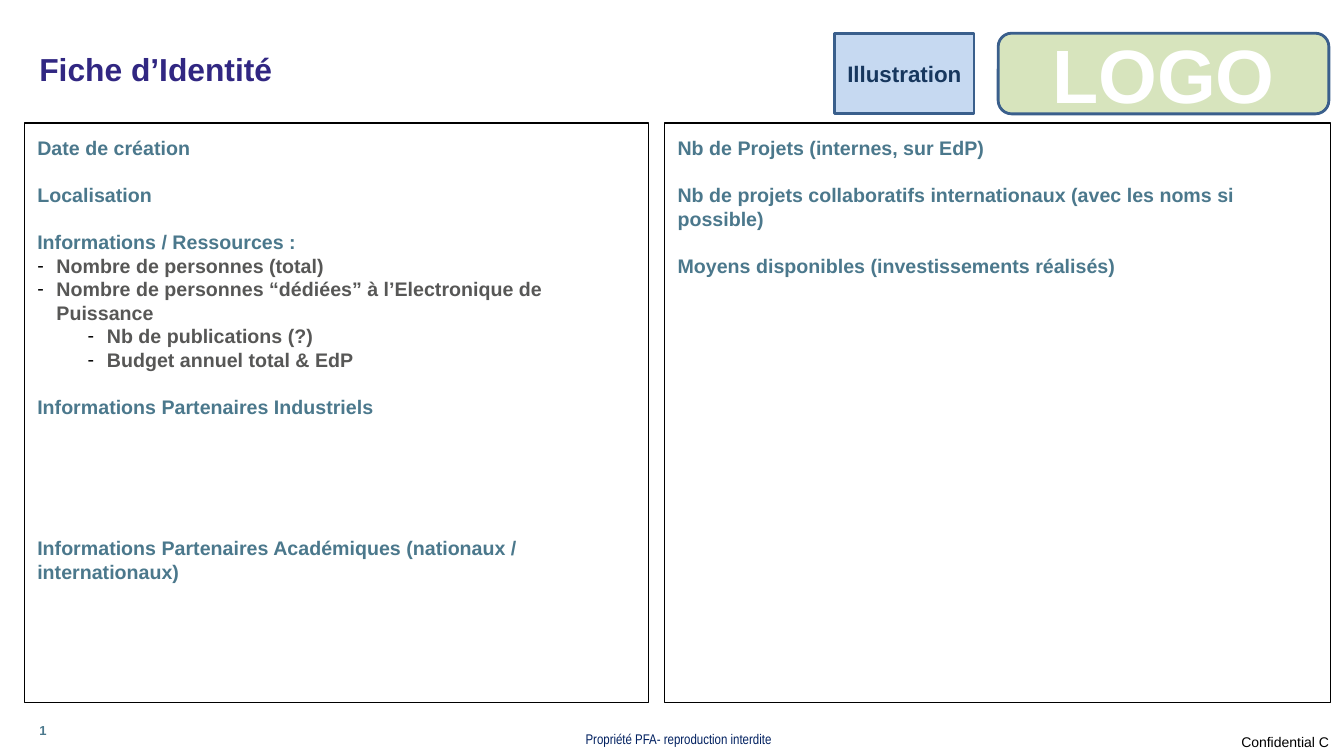
"""Build the identity sheet slide of a research partner."""
from dataclasses import dataclass

from lxml import etree
from pptx import Presentation
from pptx.dml.color import RGBColor
from pptx.enum.shapes import MSO_SHAPE
from pptx.enum.text import MSO_ANCHOR, MSO_AUTO_SIZE, PP_ALIGN
from pptx.oxml.ns import qn
from pptx.util import Inches, Pt

TOP, MIDDLE, BOTTOM = MSO_ANCHOR.TOP, MSO_ANCHOR.MIDDLE, MSO_ANCHOR.BOTTOM
LEFT, CENTER, RIGHT = PP_ALIGN.LEFT, PP_ALIGN.CENTER, PP_ALIGN.RIGHT
RECTANGLE, ROUNDED = MSO_SHAPE.RECTANGLE, MSO_SHAPE.ROUNDED_RECTANGLE
NO_AUTOFIT = MSO_AUTO_SIZE.NONE
TWO_CONTENT_LAYOUT = 3
LINE_PITCH = 16.8
HANGING = 0.19
COLORS = {
    "title": "312782", "heading": "4B788C", "detail": "575756",
    "black": "000000", "white": "FFFFFF", "footer": "002060",
    "badge_line": "3A5F8C", "logo_fill": "D7E4BD",
    "picture_fill": "C6D9F1", "picture_text": "17375E",
}


@dataclass(frozen=True)
class Item:
    """One line of a panel; a margin makes it a dashed detail."""
    text: str
    blank_lines: int = 1
    margin: float | None = None


@dataclass(frozen=True)
class Panel:
    """A framed list."""
    left: float
    width: float
    items: tuple[Item, ...]


@dataclass(frozen=True)
class Badge:
    """A filled label at the top of the page."""
    text: str
    preset: MSO_SHAPE
    left: float
    width: float
    fill: str
    color: str
    size: float


@dataclass(frozen=True)
class Note:
    """A small text at the foot of the page."""
    text: str
    area: tuple[float, float, float, float]
    insets: tuple[float, float, float, float]
    size: float
    color: str
    bold: bool = False
    font: str = "Arial"
    align: PP_ALIGN = LEFT
    anchor: MSO_ANCHOR = TOP


PANELS = (
    Panel(0.24, 6.19, (
        Item("Date de création"),
        Item("Localisation"),
        Item("Informations / Ressources :"),
        Item("Nombre de personnes (total)", 0, 0.19),
        Item("Nombre de personnes “dédiées” à l’Electronique de Puissance", 0, 0.19),
        Item("Nb de publications (?)", 0, 0.69),
        Item("Budget annuel total & EdP", 0, 0.69),
        Item("Informations Partenaires Industriels"),
        Item("Informations Partenaires Académiques (nationaux / internationaux)", 5),
    )),
    Panel(6.59, 6.61, (
        Item("Nb de Projets (internes, sur EdP)"),
        Item("Nb de projets collaboratifs internationaux (avec les noms si possible)"),
        Item("Moyens disponibles (investissements réalisés)"),
    )),
)
BADGES = (
    Badge("LOGO", ROUNDED, 9.9, 3.28, "logo_fill", "white", 54),
    Badge("Illustration", RECTANGLE, 8.28, 1.38, "picture_fill", "picture_text", 16),
)
NOTES = (
    Note("Propriété PFA- reproduction interdite", (5.71, 7.2, 3.38, 0.3),
         (0.1, 0.05, 0.1, 0.05), 10, "footer", font="Arial Narrow"),
    Note("Confidential C", (12, 7.23, 1.18, 0.27), (0, 0, 0, 0), 10, "black",
         align=RIGHT, anchor=MIDDLE),
    Note("1", (0.39, 7.13, 0.23, 0.19), (0, 0.04, 0, 0), 9.3, "heading", bold=True),
)


def rgb(name: str) -> RGBColor:
    """Return a named colour."""
    return RGBColor.from_string(COLORS[name])


def place(box, left: float, top: float, width: float, height: float) -> None:
    """Move and size a box."""
    box.left, box.top = Inches(left), Inches(top)
    box.width, box.height = Inches(width), Inches(height)


def set_frame(box, insets: tuple[float, float, float, float], anchor: MSO_ANCHOR):
    """Set the insets and anchor of a box and return its text frame."""
    frame = box.text_frame
    frame.word_wrap = True
    frame.auto_size = NO_AUTOFIT
    frame.vertical_anchor = anchor
    (frame.margin_left, frame.margin_top,
     frame.margin_right, frame.margin_bottom) = map(Inches, insets)
    return frame


def write(para, text: str, *, size: float, color: str, bold: bool = True,
          font: str = "Arial", align: PP_ALIGN = LEFT) -> None:
    """Add a formatted span to a paragraph."""
    para.alignment = align
    span = para.add_run()
    span.text = text
    span.font.size = Pt(size)
    span.font.name = font
    span.font.bold = bold
    span.font.color.rgb = rgb(color)


def set_bullet(para, margin: float | None) -> None:
    """Give a paragraph a hanging dash, or no bullet without a margin."""
    properties = para._p.get_or_add_pPr()
    properties.set("marL", str(Inches(margin or 0)))
    properties.set("indent", str(Inches(0 if margin is None else -HANGING)))
    if margin is None:
        etree.SubElement(properties, qn("a:buNone"))
        return
    color = etree.SubElement(properties, qn("a:buClr"))
    etree.SubElement(color, qn("a:srgbClr"), val=COLORS["black"])
    etree.SubElement(properties, qn("a:buFont"), typeface="Arial")
    etree.SubElement(properties, qn("a:buChar"), char="-")


def fill_panel(box, panel: Panel) -> None:
    """Frame a body placeholder and write its list."""
    place(box, panel.left, 1.22, panel.width, 5.75)
    box.line.color.rgb = rgb("black")
    box.line.width = Pt(0.75)
    frame = set_frame(box, (0.13,) * 4, TOP)
    for index, item in enumerate(panel.items):
        para = frame.add_paragraph() if index else frame.paragraphs[0]
        set_bullet(para, item.margin)
        para.level = 1 if (item.margin or 0) > HANGING else 0
        para.line_spacing = Pt(LINE_PITCH)
        para.space_before = Pt(item.blank_lines * LINE_PITCH if index else 0)
        para.space_after = Pt(0)
        write(para, item.text, size=14,
              color="heading" if item.margin is None else "detail")


def add_badge(page, badge: Badge) -> None:
    """Draw a filled label."""
    box = page.shapes.add_shape(badge.preset, Inches(badge.left), Inches(0.33),
                                Inches(badge.width), Inches(0.8))
    box.shadow.inherit = False
    box.fill.solid()
    box.fill.fore_color.rgb = rgb(badge.fill)
    box.line.color.rgb = rgb("badge_line")
    box.line.width = Pt(2)
    frame = set_frame(box, (0.1, 0.05, 0.1, 0.05), MIDDLE)
    write(frame.paragraphs[0], badge.text, size=badge.size, color=badge.color, align=CENTER)


def add_note(page, note: Note) -> None:
    """Write a small text at the foot."""
    box = page.shapes.add_textbox(*map(Inches, note.area))
    frame = set_frame(box, note.insets, note.anchor)
    write(frame.paragraphs[0], note.text, size=note.size, color=note.color,
          bold=note.bold, font=note.font, align=note.align)


def main() -> None:
    """Build and save the deck."""
    deck = Presentation()
    deck.slide_width, deck.slide_height = Inches(13.33), Inches(7.5)
    page = deck.slides.add_slide(deck.slide_layouts[TWO_CONTENT_LAYOUT])
    title, *bodies = page.placeholders
    place(title, 0.39, 0.5, 11.8, 0.46)
    para = set_frame(title, (0, 0, 0, 0.08), BOTTOM).paragraphs[0]
    para.line_spacing = 0.9
    write(para, "Fiche d’Identité", size=22.7, color="title")
    for body, panel in zip(bodies, PANELS):
        fill_panel(body, panel)
    for badge in BADGES:
        add_badge(page, badge)
    for note in NOTES:
        add_note(page, note)
    deck.save("out.pptx")


if __name__ == "__main__":
    main()
